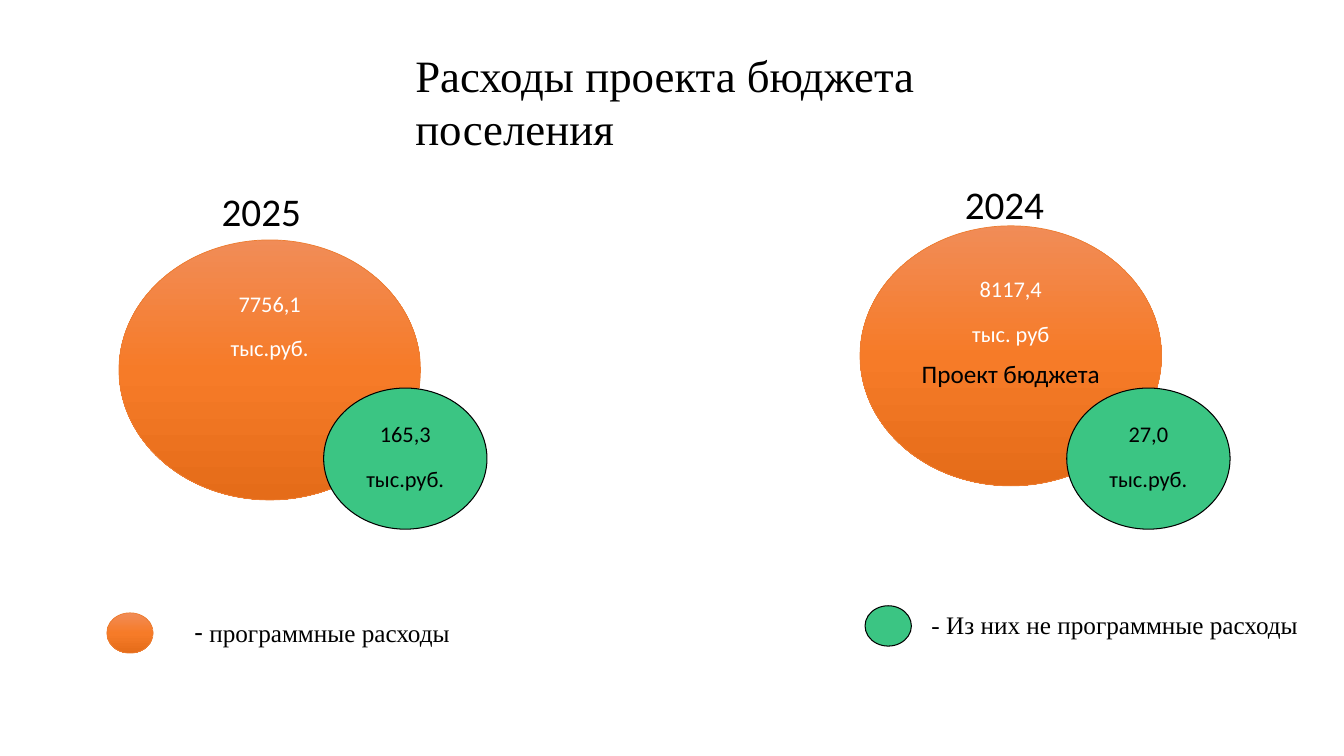
import copy

import pptx
import pptx.dml.color
import pptx.enum.shapes
import pptx.enum.text
import pptx.oxml.ns
import pptx.util

PX = 9144  # 100 px to the inch
SERIF, SANS = "Times New Roman", "Calibri"
BLACK, WHITE, GREEN, ORANGE = "000000", "FFFFFF", "3BC583", "ED7D31"
ORANGE_STOPS = [(0, "F18C57"), (0.5, "F67B28"), (1, "E56C19")]
CENTER = pptx.enum.text.PP_ALIGN.CENTER
LEFT = pptx.enum.text.PP_ALIGN.LEFT
SHAPE = pptx.enum.shapes.MSO_SHAPE


def rgb(color):
    return pptx.dml.color.RGBColor.from_string(color)


def emu(box):
    return [n * PX for n in box]


def style(p, size, font, color, align=LEFT, spaced=False):
    p.font.size = pptx.util.Pt(size)
    p.font.name = font
    p.font.color.rgb = rgb(color)
    p.alignment = align
    if spaced:
        p.line_spacing = 1.25
        p.space_after = pptx.util.Pt(8)


def write(s, lines, *look, **spacing):
    tf = s.text_frame
    tf.vertical_anchor = pptx.enum.text.MSO_ANCHOR.TOP
    tf.text = "\n".join(lines)
    for p in tf.paragraphs:
        style(p, *look, **spacing)


def add_text(slide, box, text, *look, wrap=False, **spacing):
    s = slide.shapes.add_textbox(*emu(box))
    s.text_frame.word_wrap = wrap
    s.text_frame.auto_size = pptx.enum.text.MSO_AUTO_SIZE.SHAPE_TO_FIT_TEXT
    write(s, [text], *look, **spacing)
    return s


def fill_orange(s):
    s.fill.gradient()
    s.fill.gradient_angle = 270
    stop_list = s._element.spPr.find(".//" + pptx.oxml.ns.qn("a:gsLst"))
    stop_list.append(copy.deepcopy(stop_list[-1]))
    for stop, (position, color) in zip(s.fill.gradient_stops, ORANGE_STOPS):
        stop.position = position
        stop.color.rgb = rgb(color)


def add_circle(slide, box, programme):
    """Orange for programme spending, green for the rest."""
    s = slide.shapes.add_shape(SHAPE.FLOWCHART_CONNECTOR, *emu(box))
    s.shadow.inherit = False
    if programme:
        fill_orange(s)
    else:
        s.fill.solid()
        s.fill.fore_color.rgb = rgb(GREEN)
    s.line.color.rgb = rgb(ORANGE if programme else BLACK)
    s.line.width = pptx.util.Pt(0.5 if programme else 0.75)
    return s


def add_year(slide, x, y, year, year_box, total, other, other_at):
    """Place a year's label and its two circles; the boxes are offsets from x, y."""
    s = add_circle(slide, (x, y, 299, 258), True)
    write(s, total, 16, SANS, WHITE, CENTER, spaced=True)

    dx, dy, w, h = year_box
    s = slide.shapes.add_shape(SHAPE.RECTANGLE, *emu((x + dx, y + dy, w, h)))
    s.shadow.inherit = False
    s.fill.solid()
    s.fill.fore_color.rgb = rgb(WHITE)
    s.line.fill.background()
    write(s, [year], 28, SANS, BLACK, spaced=True)

    dx, dy = other_at
    s = add_circle(slide, (x + dx, y + dy, 162, 140), False)
    write(s, other, 16, SANS, BLACK, CENTER, spaced=True)


def add_legend_item(slide, x, y, programme, text_box, text):
    add_circle(slide, (x, y, 46, 40), programme)
    dx, dy, w, h = text_box
    return add_text(slide, (x + dx, y + dy, w, h), text, 18, SERIF, BLACK)


def add_legend(slide):
    s = add_legend_item(slide, 106, 608, True, (77, -3, 276, 44), "- ")
    p = s.text_frame.paragraphs[0]
    p.runs[0].font.size = pptx.util.Pt(20)
    p.runs[0].font.name = SANS
    p.add_run().text = "программные расходы"
    add_legend_item(slide, 858, 601, False, (56, -1, 387, 40),
                    "- Из них не программные расходы")


def main():
    prs = pptx.Presentation()
    prs.slide_width, prs.slide_height = emu((1333, 750))
    slide = prs.slides.add_slide(prs.slide_layouts[6])
    add_text(slide, (402, 42, 601, 118), "Расходы проекта бюджета поселения",
             32, SERIF, BLACK, wrap=True)
    add_year(slide, 118, 238, "2025", (92, -69, 116, 56),
             ["7756,1", "тыс.руб."], ["165,3", "тыс.руб."], (203, 147))
    add_year(slide, 853, 224, "2024", (94, -62, 111, 56),
             ["8117,4", "тыс. руб"], ["27,0", "тыс.руб."], (205, 161))
    add_legend(slide)
    add_text(slide, (903, 343, 199, 48), "Проект бюджета",
             18, SANS, BLACK, CENTER, spaced=True)
    prs.save("out.pptx")


if __name__ == "__main__":
    main()
